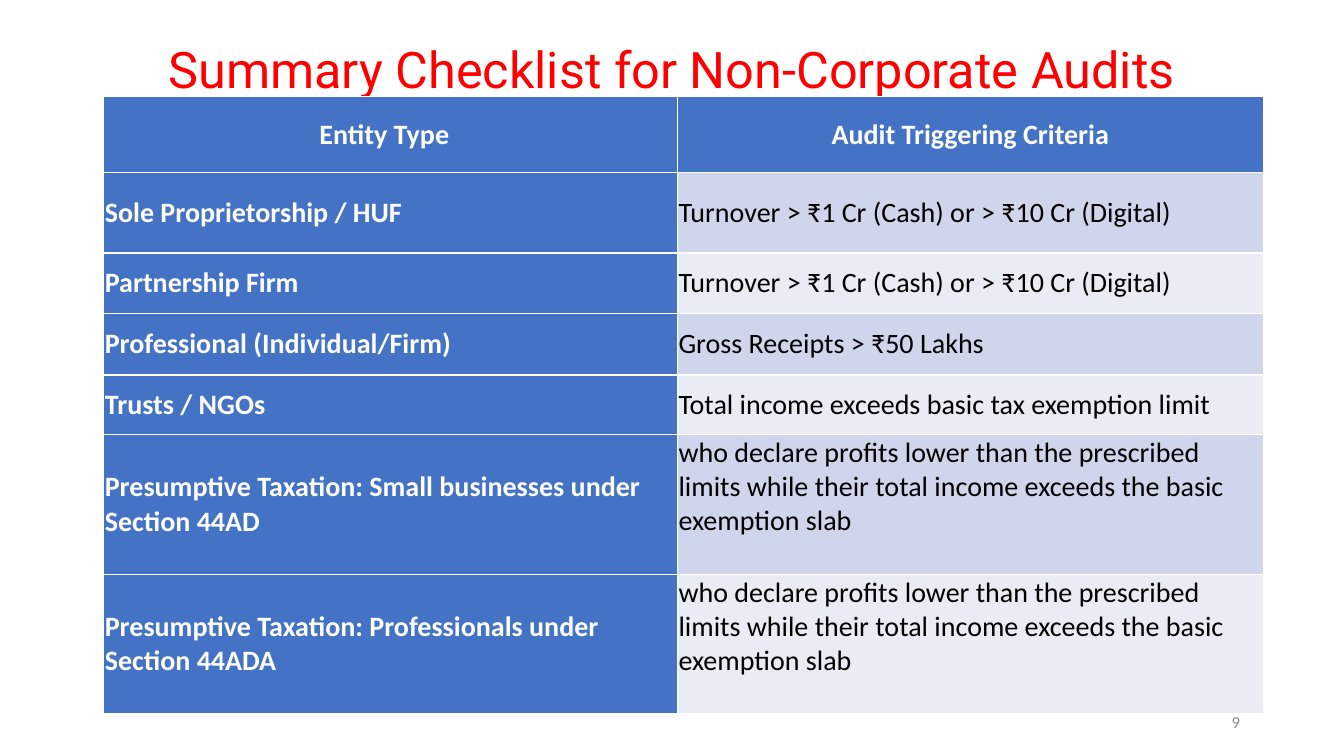
import pptx
import pptx.util
import pptx.dml.color
import pptx.enum.text

Inches, Pt = pptx.util.Inches, pptx.util.Pt
ALIGN, ANCHOR = pptx.enum.text.PP_ALIGN, pptx.enum.text.MSO_ANCHOR

SLIDE_W, SLIDE_H = 13.33, 7.5
COLORS = {
    "title": "FF0000",
    "header": "4472C4",
    "header_text": "FFFFFF",
    "body_text": "000000",
    "odd_band": "CFD5EA",
    "even_band": "E9EBF5",
    "page_number": "8C8C8C",
}
COLUMN_WIDTHS = [5.69, 5.81]
ROW_HEIGHTS = [0.75, 0.8, 0.6, 0.61, 0.59, 1.39, 1.38]
TURNOVER = "Turnover > ₹1 Cr (Cash) or > ₹10 Cr (Digital)"
LOW_PROFIT = ("who declare profits lower than the prescribed limits while "
              "their total income exceeds the basic exemption slab")
CHECKLIST = [
    ("Entity Type  ", "Audit Triggering Criteria"),
    ("Sole Proprietorship / HUF", TURNOVER),
    ("Partnership Firm", TURNOVER),
    ("Professional (Individual/Firm)", "Gross Receipts > ₹50 Lakhs"),
    ("Trusts / NGOs", "Total income exceeds basic tax exemption limit"),
    ("Presumptive Taxation: Small businesses under Section 44AD ", LOW_PROFIT),
    ("Presumptive Taxation: Professionals under Section 44ADA", LOW_PROFIT),
]


def rgb(name):
    return pptx.dml.color.RGBColor.from_string(COLORS[name])


def style_paragraph(paragraph, font, size, color, align, bold=False):
    paragraph.alignment = align
    paragraph.font.name = font
    paragraph.font.size = Pt(size)
    paragraph.font.bold = bold
    paragraph.font.color.rgb = rgb(color)


def add_text(slide, text, box, font, size, color, align):
    """Add one line of text; box holds shares of the slide's width and height."""
    left, top, width, height = box
    frame = slide.shapes.add_textbox(
        Inches(left * SLIDE_W), Inches(top * SLIDE_H),
        Inches(width * SLIDE_W), Inches(height * SLIDE_H)).text_frame
    frame.word_wrap = True
    frame.vertical_anchor = ANCHOR.MIDDLE
    paragraph = frame.paragraphs[0]
    paragraph.text = text
    style_paragraph(paragraph, font, size, color, align)
    return paragraph


def fill_cell(cell, text, row, column):
    is_header = row == 0
    is_label = is_header or column == 0
    band = "odd_band" if row % 2 else "even_band"
    cell.fill.solid()
    cell.fill.fore_color.rgb = rgb("header" if is_label else band)
    cell.margin_left = cell.margin_right = Inches(0.01)
    cell.margin_top = cell.margin_bottom = Inches(0.01)
    is_long = text == LOW_PROFIT
    cell.vertical_anchor = ANCHOR.TOP if is_long else ANCHOR.MIDDLE
    cell.text = text
    style_paragraph(cell.text_frame.paragraphs[0], "Calibri", 20,
                    "header_text" if is_label else "body_text",
                    ALIGN.CENTER if is_header else ALIGN.LEFT, is_label)


def add_checklist(slide, left, top):
    table = slide.shapes.add_table(
        len(CHECKLIST), len(COLUMN_WIDTHS), Inches(left), Inches(top),
        Inches(sum(COLUMN_WIDTHS)), Inches(sum(ROW_HEIGHTS))).table
    table.first_col = True
    for column, width in zip(table.columns, COLUMN_WIDTHS):
        column.width = Inches(width)
    for row, height in zip(table.rows, ROW_HEIGHTS):
        row.height = Inches(height)
    for r, texts in enumerate(CHECKLIST):
        for c, text in enumerate(texts):
            fill_cell(table.cell(r, c), text, r, c)


def main():
    deck = pptx.Presentation()
    deck.slide_width, deck.slide_height = Inches(SLIDE_W), Inches(SLIDE_H)
    slide = deck.slides.add_slide(deck.slide_layouts[6])
    title = add_text(slide, "Summary Checklist for Non-Corporate Audits",
                     (0.07, 0.05, 0.86, 0.09), "Roboto", 36, "title", ALIGN.CENTER)
    title.line_spacing = 0.9
    add_checklist(slide, 1.03, 0.96)
    add_text(slide, "9", (0.71, 0.93, 0.22, 0.05),
             "Calibri", 12, "page_number", ALIGN.RIGHT)
    deck.save("out.pptx")


if __name__ == "__main__":
    main()
